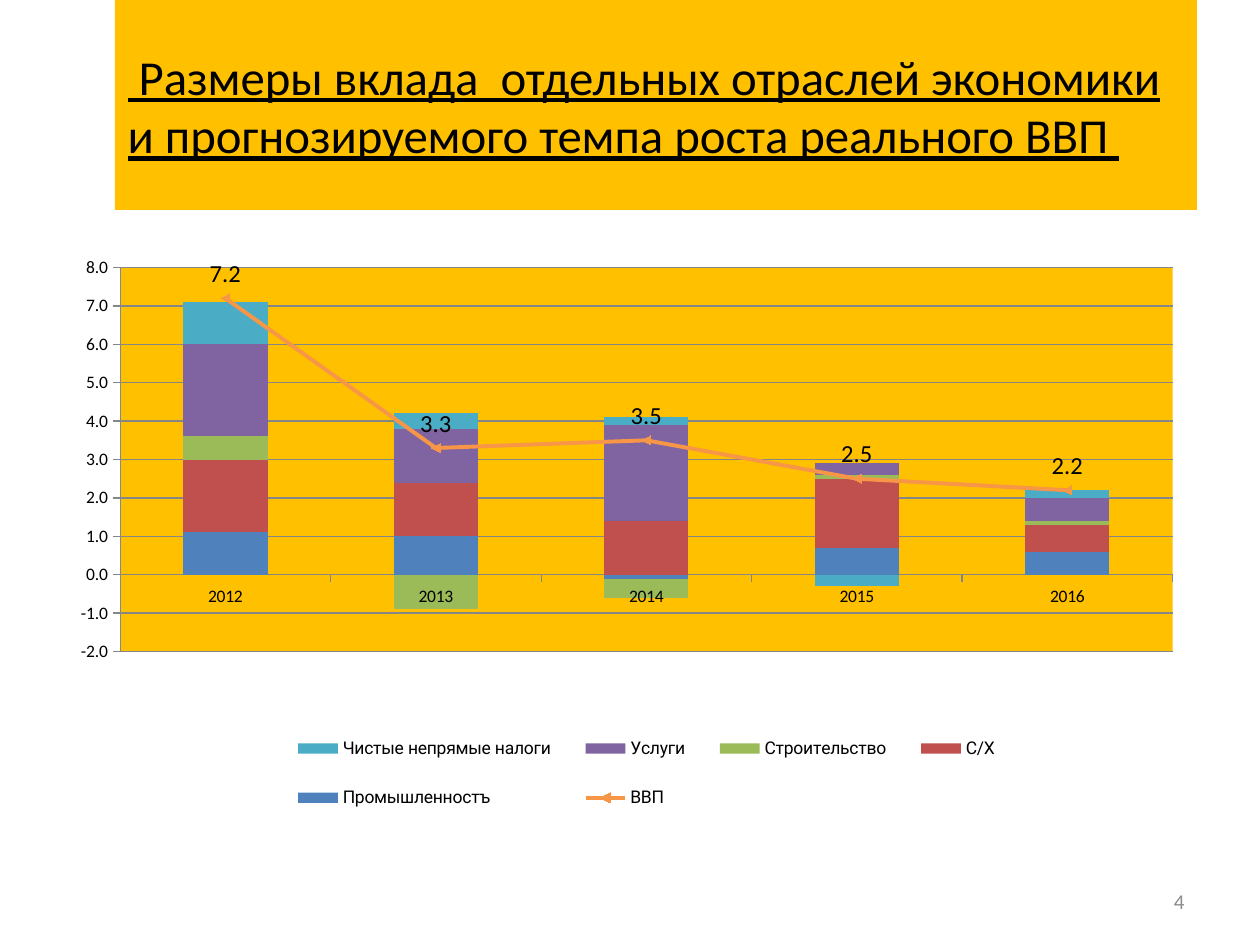
from lxml.etree import SubElement
from pptx import Presentation
from pptx.chart.data import CategoryChartData
from pptx.dml.color import RGBColor
from pptx.enum.chart import XL_CHART_TYPE, XL_LABEL_POSITION, XL_LEGEND_POSITION, XL_TICK_MARK
from pptx.enum.text import MSO_ANCHOR, PP_ALIGN
from pptx.oxml import parse_xml
from pptx.oxml.ns import nsdecls, qn
from pptx.util import Emu, Pt

# Content
TITLE = " Размеры вклада  отдельных отраслей экономики и прогнозируемого темпа роста реального ВВП "
PAGE_NUMBER = "4"
YEARS = ["2012", "2013", "2014", "2015", "2016"]
BRANCHES = [
    ("Промышленностъ", "4F81BD", (1.1, 1.0, -0.1, 0.7, 0.6)),
    ("С/Х", "C0504D", (1.9, 1.4, 1.4, 1.8, 0.7)),
    ("Строительство", "9BBB59", (0.6, -0.9, -0.5, 0.1, 0.1)),
    ("Услуги", "8064A2", (2.4, 1.4, 2.5, 0.3, 0.6)),
    ("Чистые непрямые налоги", "4BACC6", (1.1, 0.4, 0.2, -0.3, 0.2)),
]
GDP = ("ВВП", "F79646", (7.2, 3.3, 3.5, 2.5, 2.2))

# Places in px: left, top, width, height
SLIDE_SIZE = (1260, 945)
TITLE_BOX = (115, 0, 1082, 210)
PAGE_BOX = (903, 876, 294, 50)
CHART_BOX = (63, 242, 1144, 640)
PLOT_LAYOUT = (0.05, 0.04, 0.92, 0.6)  # fractions of the chart
LEGEND_LAYOUT = (0.18, 0.73, 0.66, 0.2)
GOLD, BLACK, GRID, PAGE_GREY = "FFC000", "000000", "868686", "8C8C8C"


def px(length):
    return Emu(round(length * 914400 / 126))


def color(value):
    return RGBColor.from_string(value)


def set_all(target, values):
    for key, value in values.items():
        setattr(target, key, value)


def place(shape, box):
    set_all(shape, dict(zip(("left", "top", "width", "height"), map(px, box))))


def format_font(font, size, hex_color=BLACK, name="Calibri", **extra):
    set_all(font, {"size": Pt(size), "name": name, **extra})
    font.color.rgb = color(hex_color)


def write(shape, text, align, size, hex_color, **extra):
    frame = shape.text_frame
    set_all(frame, {"word_wrap": True, "vertical_anchor": MSO_ANCHOR.MIDDLE})
    paragraph = frame.paragraphs[0]
    paragraph.alignment = align
    run = paragraph.add_run()
    run.text = text
    format_font(run.font, size, hex_color, **extra)


def set_layout(parent, index, fractions, inner=False):
    for old in parent.findall(qn("c:layout")):
        parent.remove(old)
    layout = parse_xml(f"<c:layout {nsdecls('c')}><c:manualLayout/></c:layout>")
    values = [("layoutTarget", "inner")] if inner else []
    values += [("xMode", "edge"), ("yMode", "edge"), *zip("xywh", fractions)]
    for tag, value in values:
        SubElement(layout[0], qn(f"c:{tag}")).set("val", str(value))
    parent.insert(index, layout)


def move_last_series_to_line(plot_area):
    """Turn the last column series into a line on the same axes."""
    bars = plot_area.find(qn("c:barChart"))
    series = bars.findall(qn("c:ser"))[-1]
    for bar_only in series.findall(qn("c:invertIfNegative")):
        series.remove(bar_only)
    line = parse_xml(f'<c:lineChart {nsdecls("c")}><c:grouping val="standard"/>'
                     '<c:varyColors val="0"/><c:marker val="1"/></c:lineChart>')
    line.insert(2, series)
    for axis_id in bars.findall(qn("c:axId")):
        SubElement(line, qn("c:axId")).set("val", axis_id.get("val"))
    bars.addnext(line)


def add_growth_chart(slide):
    data = CategoryChartData(number_format="0.0")
    data.categories = YEARS
    for name, _, values in [*BRANCHES, GDP]:
        data.add_series(name, values)
    chart = slide.shapes.add_chart(
        XL_CHART_TYPE.COLUMN_STACKED, *map(px, CHART_BOX), data).chart
    chart.has_title = False
    format_font(chart.font, 10)

    # Plot area and plots
    plot_area = chart.plots[0]._element.getparent()
    set_layout(plot_area, 0, PLOT_LAYOUT, inner=True)
    move_last_series_to_line(plot_area)
    plot_area.append(parse_xml(
        f'<c:spPr {nsdecls("c", "a")}><a:solidFill><a:srgbClr val="{GOLD}"/>'
        '</a:solidFill></c:spPr>'))
    columns, line = chart.plots
    set_all(columns, {"gap_width": 150, "overlap": 100, "vary_by_categories": False})
    for branch, (_, fill, _) in zip(columns.series, BRANCHES):
        branch.invert_if_negative = False
        branch.format.fill.solid()
        branch.format.fill.fore_color.rgb = color(fill)

    # GDP line with value labels
    gdp = line.series[0]
    gdp.smooth = False
    gdp.format.line.width = Pt(2.25)
    gdp.format.line.color.rgb = color(GDP[1])
    labels = gdp.data_labels
    set_all(labels, {"show_value": True, "position": XL_LABEL_POSITION.ABOVE,
                     "number_format": "0.0", "number_format_is_linked": False})
    format_font(labels.font, 14)

    # Axes
    values = chart.value_axis
    set_all(values, {"minimum_scale": -2, "maximum_scale": 8, "major_unit": 1,
                     "has_major_gridlines": True})
    set_all(values.tick_labels, {"number_format": "0.0", "number_format_is_linked": False})
    for axis in (chart.category_axis, values):
        axis.major_tick_mark = XL_TICK_MARK.OUTSIDE
    for ruled in (chart.category_axis, values, values.major_gridlines):
        ruled.format.line.color.rgb = color(GRID)
        ruled.format.line.width = Pt(0.75)

    # Legend
    chart.has_legend = True
    legend = chart.legend
    set_all(legend, {"position": XL_LEGEND_POSITION.RIGHT, "include_in_layout": False})
    format_font(legend.font, 10, name="Roboto")
    legend_xml = legend._element
    set_layout(legend_xml, len(legend_xml.findall(qn("c:legendPos"))), LEGEND_LAYOUT)


def main():
    deck = Presentation()
    deck.slide_width, deck.slide_height = map(px, SLIDE_SIZE)
    slide = deck.slides.add_slide(deck.slide_layouts[5])

    # Title band
    title = slide.shapes.title
    place(title, TITLE_BOX)
    title.fill.solid()
    title.fill.fore_color.rgb = color(GOLD)
    write(title, TITLE, PP_ALIGN.LEFT, 27.9, BLACK, underline=True, bold=False)

    # Page number
    page = slide.shapes.add_textbox(*map(px, PAGE_BOX))
    write(page, PAGE_NUMBER, PP_ALIGN.RIGHT, 12, PAGE_GREY)

    add_growth_chart(slide)
    deck.save("out.pptx")


if __name__ == "__main__":
    main()
